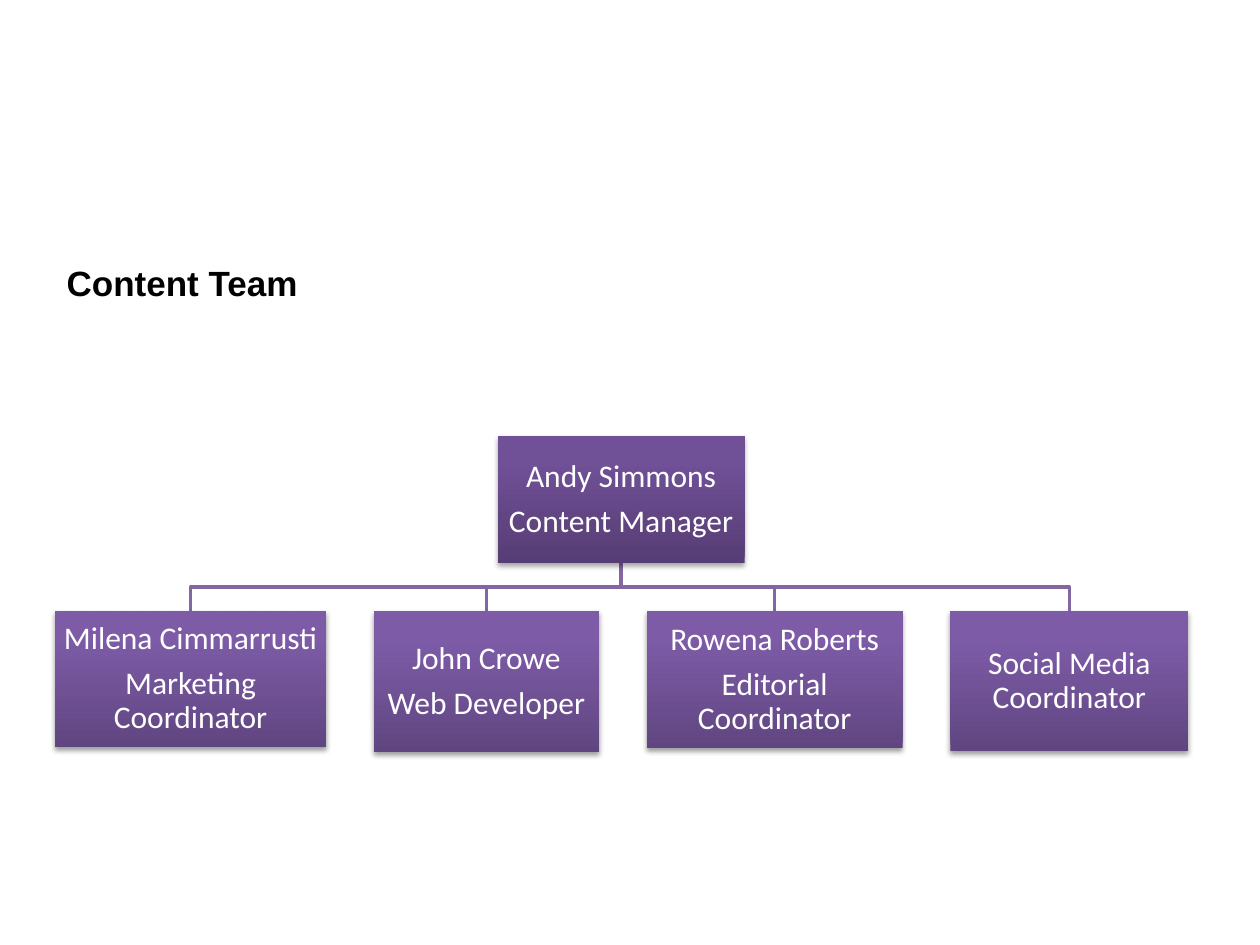
from copy import deepcopy

from lxml import etree
from pptx import Presentation
from pptx.dml.color import RGBColor
from pptx.enum.shapes import MSO_SHAPE
from pptx.enum.text import MSO_ANCHOR, PP_ALIGN
from pptx.oxml.ns import qn
from pptx.util import Pt

RECT = MSO_SHAPE.RECTANGLE
MIDDLE = MSO_ANCHOR.MIDDLE
CENTER = PP_ALIGN.CENTER

COLORS = {
    "title": "000000", "text": "FFFFFF", "line": "8267A3", "shade": "000000",
    "lead": ("563D74", "705097", "704F99"),
    "staff": ("604681", "7D5BA7", "7E5AA9"),
}
STOPS = (0, 0.8, 1)
SIDES = ("left", "top", "right", "bottom")

LEAD = (284.4, 249.1, 141.1, 72.7)
TEAM = [  # width, height, lines
    (154.8, 77.8, ["Milena Cimmarrusti", "Marketing Coordinator"]),
    (128.9, 80.6, ["John Crowe", "Web Developer"]),
    (146.2, 78.5, ["Rowena Roberts", "Editorial Coordinator"]),
    (136.1, 79.9, ["Social Media Coordinator"]),
]
LEFT, ROW, GAP = 31.5, 349.2, 27.2


def rgb(name):
    return RGBColor.from_string(COLORS[name])


def style(obj, **values):
    for key, value in values.items():
        setattr(obj, key, value)


def add_title(slide, text, box):
    frame = slide.shapes.add_textbox(*map(Pt, box)).text_frame
    style(frame, word_wrap=True, vertical_anchor=MIDDLE, text=text)
    font = frame.paragraphs[0].font
    style(font, name="Arial", size=Pt(20), bold=True)
    font.color.rgb = rgb("title")


def add_link(slide, start, end):
    """Draw an elbow line that turns halfway down."""
    (x, y), (tox, toy) = start, end
    mid = (y + toy) / 2
    pen = slide.shapes.build_freeform(Pt(x), Pt(y))
    points = [(x, mid), (tox, mid), (tox, toy)]
    pen.add_line_segments([(Pt(a), Pt(b)) for a, b in points], close=False)
    link = pen.convert_to_shape()
    link.shadow.inherit = False
    link.fill.background()
    link.line.color.rgb = rgb("line")
    link.line.width = Pt(2)


def add_fade(shape, hues):
    """Fill from the bottom up with three colour stops."""
    shape.fill.gradient()
    shape.fill.gradient_angle = 90
    stop = shape._element.spPr.find(".//" + qn("a:gs"))
    stop.addnext(deepcopy(stop))
    for item, spot, hue in zip(shape.fill.gradient_stops, STOPS, hues):
        item.position = spot
        item.color.rgb = RGBColor.from_string(hue)


def add_shade(shape, alpha, drop):
    shape.shadow.inherit = False
    effects = shape._element.spPr.find(qn("a:effectLst"))
    shade = etree.SubElement(
        effects, qn("a:outerShdw"), blurRad=str(Pt(3.1)),
        dist=str(Pt(drop)), dir="5400000", rotWithShape="0")
    color = etree.SubElement(shade, qn("a:srgbClr"), val=COLORS["shade"])
    etree.SubElement(color, qn("a:alpha"), val=str(alpha * 1000))


def add_card(slide, box, lines, hues, alpha, drop):
    card = slide.shapes.add_shape(RECT, *map(Pt, box))
    add_fade(card, COLORS[hues])
    card.line.fill.background()
    add_shade(card, alpha, drop)
    frame = card.text_frame
    style(frame, word_wrap=True, vertical_anchor=MIDDLE,
          text="\n".join(lines))
    style(frame, **{f"margin_{side}": Pt(0.9) for side in SIDES})
    for para in frame.paragraphs:
        style(para, alignment=CENTER, line_spacing=0.9, space_after=Pt(6.3))
        style(para.font, name="Calibri", size=Pt(18))
        para.font.color.rgb = rgb("text")


def main():
    deck = Presentation()
    style(deck, slide_width=Pt(720), slide_height=Pt(540))
    slide = deck.slides.add_slide(deck.slide_layouts[6])
    add_title(slide, "Content Team", (31, 116.6, 460, 90))

    boxes, left = [], LEFT
    for width, height, _ in TEAM:
        boxes.append((left, ROW, width, height))
        left += width + GAP

    x, y, width, height = LEAD
    start = (x + width / 2, y + height)
    for box in reversed(boxes):
        add_link(slide, start, (box[0] + box[2] / 2, ROW))

    add_card(slide, LEAD, ["Andy Simmons", "Content Manager"], "lead", 35, 1.8)
    for box, (_, _, lines) in zip(boxes, TEAM):
        add_card(slide, box, lines, "staff", 38, 1.6)
    deck.save("out.pptx")


if __name__ == "__main__":
    main()
